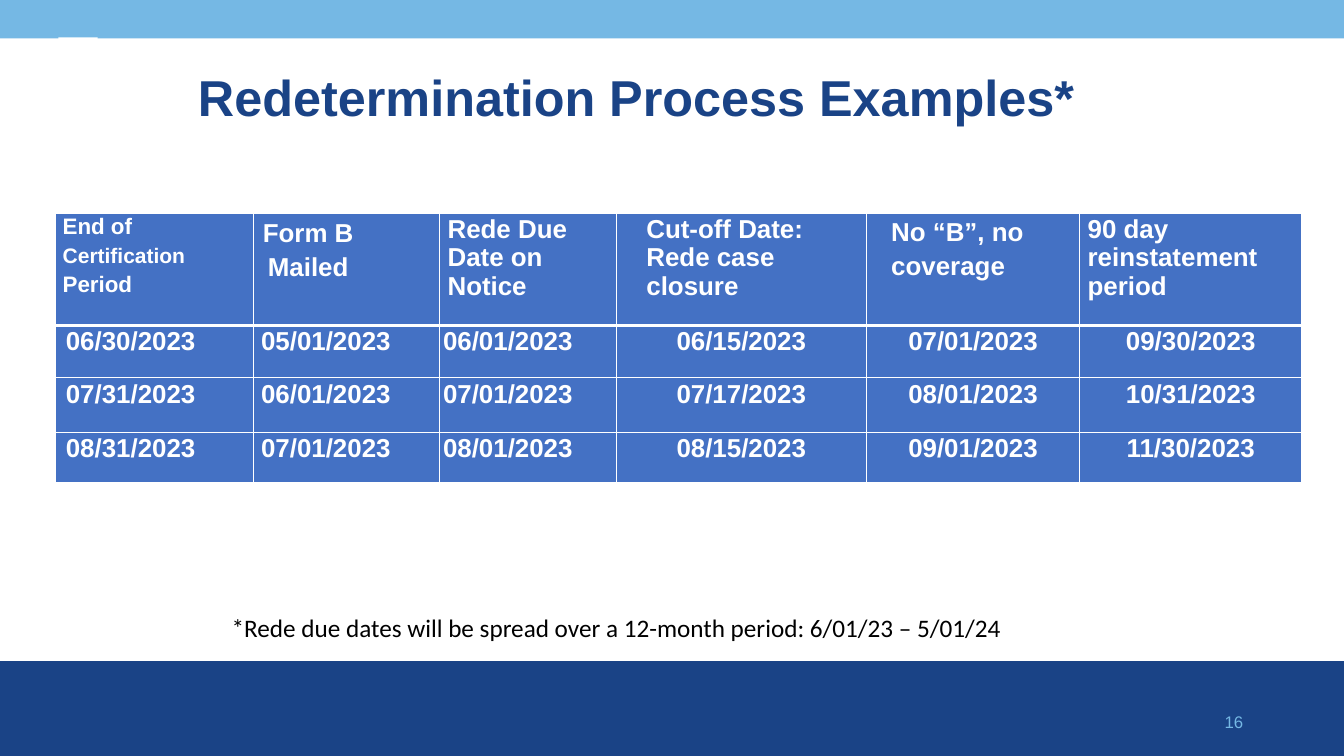
from lxml import etree
from pptx import Presentation
from pptx.dml.color import RGBColor
from pptx.enum.shapes import MSO_SHAPE
from pptx.enum.text import PP_ALIGN
from pptx.oxml.ns import qn
from pptx.util import Cm, Pt

RECTANGLE = MSO_SHAPE.RECTANGLE
LEFT, CENTER = PP_ALIGN.LEFT, PP_ALIGN.CENTER

NAVY = RGBColor(0x1A, 0x43, 0x86)
SKY = RGBColor(0x75, 0xB8, 0xE4)
CELL_BLUE = RGBColor(0x44, 0x71, 0xC4)
WHITE = RGBColor(0xFF, 0xFF, 0xFF)
BLACK = RGBColor(0, 0, 0)

COLUMN_WIDTHS = [4.98, 4.7, 4.45, 6.3, 5.38, 5.59]
ROW_HEIGHTS = [2.82, 1.32, 1.38, 1.27]
DATE_RIGHT_MARGINS = [1.2, 1.04, 1.02, 0, 0, 0]
DATE_SIZE = 18.5

# Each heading: paragraphs of (text, size) runs, alignment,
# left, top and right margins, line spacing of each paragraph
HEADINGS = [
    ([[("End of", 16)], [("Certification", 15), (" Period", 16)]],
     LEFT, (0.18, 0.03, 1.2), (1, 1.16)),
    ([[("Form B Mailed", DATE_SIZE)]], CENTER, (0, 0.03, 1.93), (1.16,)),
    ([[("Rede Due Date on Notice", DATE_SIZE)]], LEFT, (0.2, 0.03, 0.8), (1,)),
    ([[("Cut-off Date:", DATE_SIZE)], [("Rede case closure", DATE_SIZE)]],
     LEFT, (0.76, 0.03, 1.27), (1, 1)),
    ([[("No “B”, no", DATE_SIZE)], [("coverage", DATE_SIZE)]],
     LEFT, (0.63, 0.13, 0.13), (1, 1.16)),
    ([[("90 day reinstatement period", DATE_SIZE)]], LEFT, (0.2, 0.03, 0), (1,)),
]
DATES = [
    ["06/30/2023", "05/01/2023", "06/01/2023", "06/15/2023", "07/01/2023", "09/30/2023"],
    ["07/31/2023", "06/01/2023", "07/01/2023", "07/17/2023", "08/01/2023", "10/31/2023"],
    ["08/31/2023", "07/01/2023", "08/01/2023", "08/15/2023", "09/01/2023", "11/30/2023"],
]


def add_band(page, left, top, width, height, color):
    band = page.shapes.add_shape(RECTANGLE, Cm(left), Cm(top), Cm(width), Cm(height))
    band.shadow.inherit = False
    band.fill.solid()
    band.fill.fore_color.rgb = color
    band.line.fill.background()


def add_span(para, text, size, color, font="Arial", bold=False):
    span = para.add_run()
    span.text = text
    span.font.size = Pt(size)
    span.font.name = font
    span.font.bold = bold
    span.font.color.rgb = color


def set_margins(target, left, top, right, bottom):
    target.margin_left, target.margin_top = Cm(left), Cm(top)
    target.margin_right, target.margin_bottom = Cm(right), Cm(bottom)


def add_text(page, place, margins, text, size, color, align=LEFT, **style):
    box = page.shapes.add_textbox(*[Cm(length) for length in place])
    frame = box.text_frame
    frame.word_wrap = True
    set_margins(frame, *margins)
    para = frame.paragraphs[0]
    para.alignment = align
    add_span(para, text, size, color, **style)


def set_borders(cell, top, bottom):
    properties = cell._tc.get_or_add_tcPr()
    sides = [("a:lnL", 1), ("a:lnR", 1), ("a:lnT", top), ("a:lnB", bottom)]
    for position, (side, points) in enumerate(sides):
        line = etree.Element(qn(side), w=str(Pt(points)))
        fill = etree.SubElement(line, qn("a:solidFill"))
        etree.SubElement(fill, qn("a:srgbClr"), val=str(WHITE))
        properties.insert(position, line)


def fill_cell(cell, paragraphs, align, margins, spacings):
    cell.fill.solid()
    cell.fill.fore_color.rgb = CELL_BLUE
    left, top, right = margins
    set_margins(cell, left, top, right, 0)
    frame = cell.text_frame
    for index, spans in enumerate(paragraphs):
        para = frame.add_paragraph() if index else frame.paragraphs[0]
        para.alignment = align
        para.line_spacing = spacings[index]
        for text, size in spans:
            add_span(para, text, size, WHITE, bold=True)


def add_date_table(page):
    frame = page.shapes.add_table(
        len(ROW_HEIGHTS), len(COLUMN_WIDTHS), Cm(1.4), Cm(5.38),
        Cm(sum(COLUMN_WIDTHS)), Cm(sum(ROW_HEIGHTS)))
    table = frame.table
    for column, width in zip(table.columns, COLUMN_WIDTHS):
        column.width = Cm(width)
    for row, height in zip(table.rows, ROW_HEIGHTS):
        row.height = Cm(height)

    # Heading row with a thick rule below
    for column, heading in enumerate(HEADINGS):
        cell = table.cell(0, column)
        fill_cell(cell, *heading)
        set_borders(cell, 1, 3)

    # Date rows
    for row, dates in enumerate(DATES, start=1):
        for column, date in enumerate(dates):
            cell = table.cell(row, column)
            margins = (0, 0.05, DATE_RIGHT_MARGINS[column])
            fill_cell(cell, [[(date, DATE_SIZE)]], CENTER, margins, (1,))
            set_borders(cell, 3 if row == 1 else 1, 1)


def main():
    deck = Presentation()
    deck.slide_width, deck.slide_height = Cm(33.87), Cm(19.05)
    page = deck.slides.add_slide(deck.slide_layouts[6])

    # Footer, header and the white tab under the header
    add_band(page, 0, 16.66, 33.87, 2.39, NAVY)
    add_band(page, 0, 0, 33.87, 0.97, SKY)
    add_band(page, 1.47, 0.94, 0.99, 1.04, WHITE)

    # Title and page number
    add_text(page, (2.57, 1.6, 27.23, 3.12), (0, 0.07, 0.3, 0),
             "Redetermination Process Examples*", 36, NAVY, CENTER, bold=True)
    add_text(page, (30.76, 17.93, 0.69, 0.53), (0.1, 0, 0, 0), "16", 12, SKY)

    # Dates and footnote
    add_date_table(page)
    add_text(page, (5.59, 15.29, 23.42, 1.02), (0.25, 0.13, 0.25, 0.13),
             "*Rede due dates will be spread over a 12-month period: 6/01/23 – 5/01/24",
             18, BLACK, font="Calibri")

    deck.save("out.pptx")


if __name__ == "__main__":
    main()
